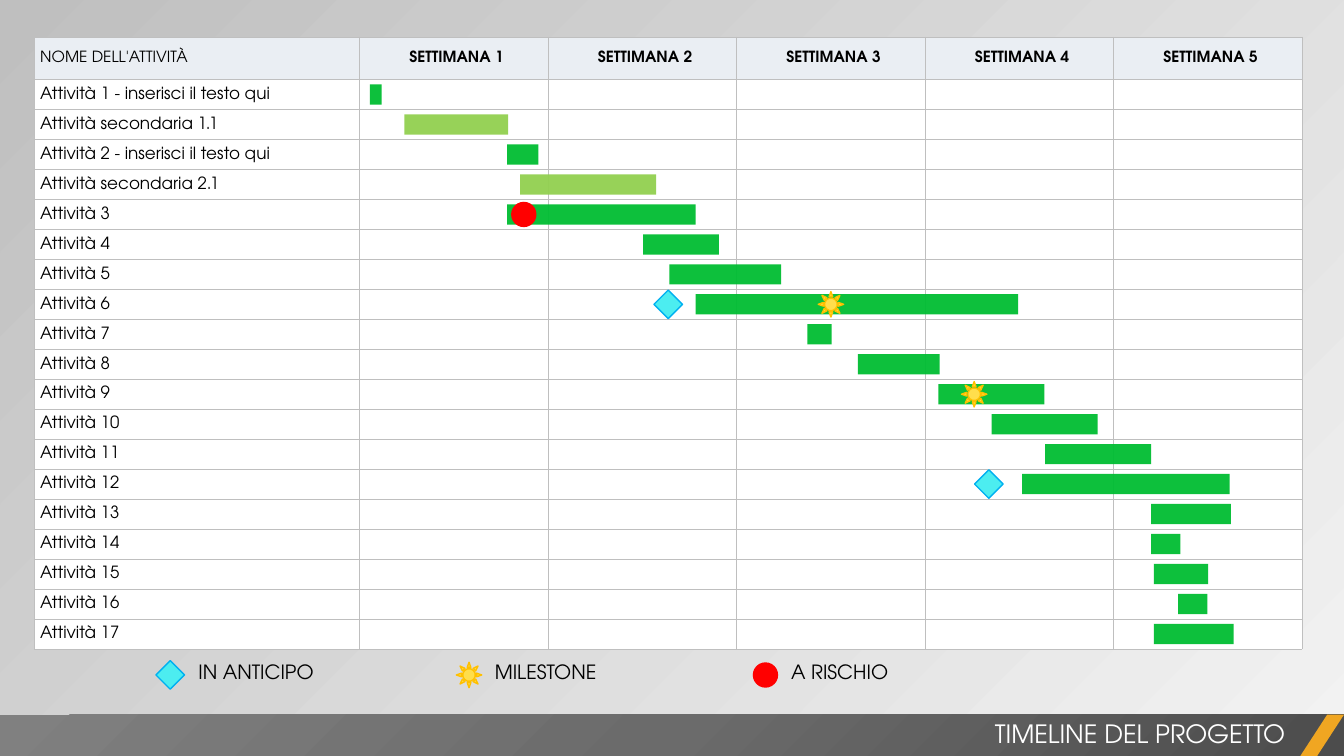
from dataclasses import dataclass

from lxml.etree import SubElement
from pptx import Presentation
from pptx.dml.color import RGBColor as Rgb
from pptx.enum.shapes import MSO_SHAPE as Kind
from pptx.enum.text import MSO_ANCHOR as Anchor
from pptx.enum.text import MSO_AUTO_SIZE as Auto
from pptx.enum.text import PP_ALIGN as Align
from pptx.oxml.ns import qn
from pptx.util import Cm, Pt


@dataclass(frozen=True)
class Theme:
    font: str = "TeX Gyre Adventor"
    black: str = "000000"
    white: str = "FFFFFF"
    head: str = "EAEEF3"
    grid: str = "BFBFBF"
    pale: str = "F2F2F2"
    main: str = "00BD32"
    sub: str = "92D050"
    amber: str = "F0A622"
    foot: tuple = ("4C4C4C", "6B6B6B", "808080")
    small: float = 11
    body: float = 12
    label: float = 14
    title: float = 18


T = Theme()

# Table measures, in cm
LEFT, TOP = 0.86, 0.94
NAME_W, WEEK_W = 8.2, 4.75
HEAD_H, ROW_H = 1.07, 0.755
BAR_H = 0.51
WEEKS = 5

# Task name, bar start and bar length in cm
TASKS = [
    ("Attività 1 - inserisci il testo qui", 9.32, 0.3),
    ("Attività secondaria 1.1", 10.19, 2.62),
    ("Attività 2 - inserisci il testo qui", 12.78, 0.79),
    ("Attività secondaria 2.1", 13.11, 3.43),
    ("Attività 3", 12.78, 4.75),
    ("Attività 4", 16.21, 1.91),
    ("Attività 5", 16.87, 2.82),
    ("Attività 6", 17.53, 8.13),
    ("Attività 7", 20.35, 0.61),
    ("Attività 8", 21.62, 2.06),
    ("Attività 9", 23.65, 2.67),
    ("Attività 10", 24.99, 2.67),
    ("Attività 11", 26.34, 2.67),
    ("Attività 12", 25.76, 5.23),
    ("Attività 13", 29.01, 2.01),
    ("Attività 14", 29.01, 0.74),
    ("Attività 15", 29.08, 1.37),
    ("Attività 16", 29.69, 0.74),
    ("Attività 17", 29.08, 2.01),
]

# Mark: shape, size, fill, line
MARKS = {
    "early": (Kind.RECTANGLE, 0.51, "4CEDF0", "00B0F0"),
    "goal": (Kind.SUN, 0.64, "FFDE4C", "FFC000"),
    "risk": (Kind.OVAL, 0.64, "FF0000", None),
}
# Mark, its centre, label, label left, label width
LEGEND = [
    ("early", 4.29, "IN ANTICIPO", 4.75, 5.64),
    ("goal", 11.82, "MILESTONE", 12.22, 3.12),
    ("risk", 19.29, "A RISCHIO", 19.69, 3.38),
]
# Mark, its centre, task row
EVENTS = [("risk", 13.2, 4), ("goal", 20.94, 7), ("goal", 24.55, 10),
          ("early", 16.84, 7), ("early", 24.92, 13)]


def color(hue):
    return Rgb.from_string(hue)


def write(frame, text, size=T.body, hue=T.black, bold=False, align=Align.LEFT):
    para = frame.paragraphs[0]
    para.alignment = align
    if not text:  # keeps an empty cell as low as its row
        SubElement(para._p, qn("a:endParaRPr"), sz=str(size * 100))
        return
    run = para.add_run()
    run.text = text
    font = run.font
    font.name, font.size, font.bold = T.font, Pt(size), bold
    font.color.rgb = color(hue)


def label(slide, text, x, y, w, h, wrap=True, **style):
    frame = slide.shapes.add_textbox(Cm(x), Cm(y), Cm(w), Cm(h)).text_frame
    frame.word_wrap = wrap
    frame.auto_size = Auto.SHAPE_TO_FIT_TEXT
    write(frame, text, **style)


def shape(slide, kind, x, y, w, h, fill, line=None, alpha=None):
    item = slide.shapes.add_shape(kind, Cm(x), Cm(y), Cm(w), Cm(h))
    item.shadow.inherit = False
    item.fill.solid()
    item.fill.fore_color.rgb = color(fill)
    if alpha:
        tone = next(item._element.spPr.iter(qn("a:srgbClr")))
        SubElement(tone, qn("a:alpha"), val=str(alpha * 1000))
    if line:
        item.line.color.rgb = color(line)
        item.line.width = Pt(1)
    else:
        item.line.fill.background()
    return item


def blend(fill, root, stops, angle=None):
    """Stops are (place, colour, opacity); with no angle the blend is round."""
    fill.gradient()
    grad = next(root.iter(qn("a:gradFill")))
    grad.clear()
    grad.set("rotWithShape", "1")
    group = SubElement(grad, qn("a:gsLst"))
    for place, hue, alpha in stops:
        stop = SubElement(group, qn("a:gs"), pos=str(place * 1000))
        tone = SubElement(stop, qn("a:srgbClr"), val=hue)
        if alpha < 100:
            SubElement(tone, qn("a:alpha"), val=str(alpha * 1000))
    if angle is not None:
        SubElement(grad, qn("a:lin"), ang=str(angle * 60000), scaled="0")
    else:
        ring = SubElement(grad, qn("a:path"), path="circle")
        SubElement(ring, qn("a:fillToRect"), l="100000", t="100000")


def cell(box, text, fill, **style):
    box.margin_left = Cm(0.15)
    box.margin_right = box.margin_top = box.margin_bottom = 0
    box.vertical_anchor = Anchor.MIDDLE
    props = box._tc.get_or_add_tcPr()
    for side in "LRTB":
        edge = SubElement(props, qn(f"a:ln{side}"), w=str(Pt(0.5)))
        paint = SubElement(edge, qn("a:solidFill"))
        SubElement(paint, qn("a:srgbClr"), val=T.grid)
    box.fill.solid()
    box.fill.fore_color.rgb = color(fill)
    write(box.text_frame, text, **style)


def plan(slide):
    rows, cols = len(TASKS) + 1, WEEKS + 1
    width = NAME_W + WEEKS * WEEK_W
    height = HEAD_H + len(TASKS) * ROW_H
    table = slide.shapes.add_table(
        rows, cols, Cm(LEFT), Cm(TOP), Cm(width), Cm(height)).table
    table.first_row = table.horz_banding = False
    for i, col in enumerate(table.columns):
        col.width = Cm(WEEK_W if i else NAME_W)
    for i, row in enumerate(table.rows):
        row.height = Cm(ROW_H if i else HEAD_H)
    cell(table.cell(0, 0), "NOME DELL'ATTIVITÀ", T.head, size=T.small)
    for week in range(1, cols):
        cell(table.cell(0, week), f"SETTIMANA {week}", T.head,
             size=T.small, bold=True, align=Align.CENTER)
    for i, (name, _, _) in enumerate(TASKS, 1):
        for j in range(cols):
            cell(table.cell(i, j), "" if j else name, T.white)


def bar_top(row):
    return TOP + HEAD_H + row * ROW_H + 0.12


def mark(slide, name, x, y):
    kind, size, fill, line = MARKS[name]
    item = shape(slide, kind, x - size / 2, y - size / 2, size, size, fill, line)
    item.rotation = 45


def footer(slide):
    band = shape(slide, Kind.RECTANGLE, 0, 18.01, 33.87, 1.04, T.foot[0])
    stops = [(50 * i, hue, 100) for i, hue in enumerate(T.foot)]
    blend(band.fill, band._element, stops)
    slash = shape(slide, Kind.PARALLELOGRAM, 32.77, 18.01, 1.1, 1.04, T.amber)
    slash.adjustments[0] = 0.65
    label(slide, "TIMELINE DEL PROGETTO", 13.34, 17.98, 19.3, 1.02,
          size=T.title, hue=T.white, align=Align.RIGHT)


def main():
    deck = Presentation()
    deck.slide_width, deck.slide_height = Cm(33.87), Cm(19.05)
    slide = deck.slides.add_slide(deck.slide_layouts[6])
    blend(slide.background.fill, slide._element,
          [(0, T.pale, 40), (100, T.grid, 100)], angle=225)

    # Plan and task bars
    plan(slide)
    for row, (name, x, w) in enumerate(TASKS):
        hue = T.sub if "secondaria" in name else T.main
        shape(slide, Kind.RECTANGLE, x, bar_top(row), w, BAR_H, hue, alpha=95)

    # Legend and events
    for name, x, text, left, w in LEGEND:
        mark(slide, name, x, 17.01)
        label(slide, text, left, 16.51, w, 0.86, wrap=False, size=T.label)
    for name, x, row in EVENTS:
        mark(slide, name, x, bar_top(row) + BAR_H / 2)

    footer(slide)
    deck.save("out.pptx")


if __name__ == "__main__":
    main()
